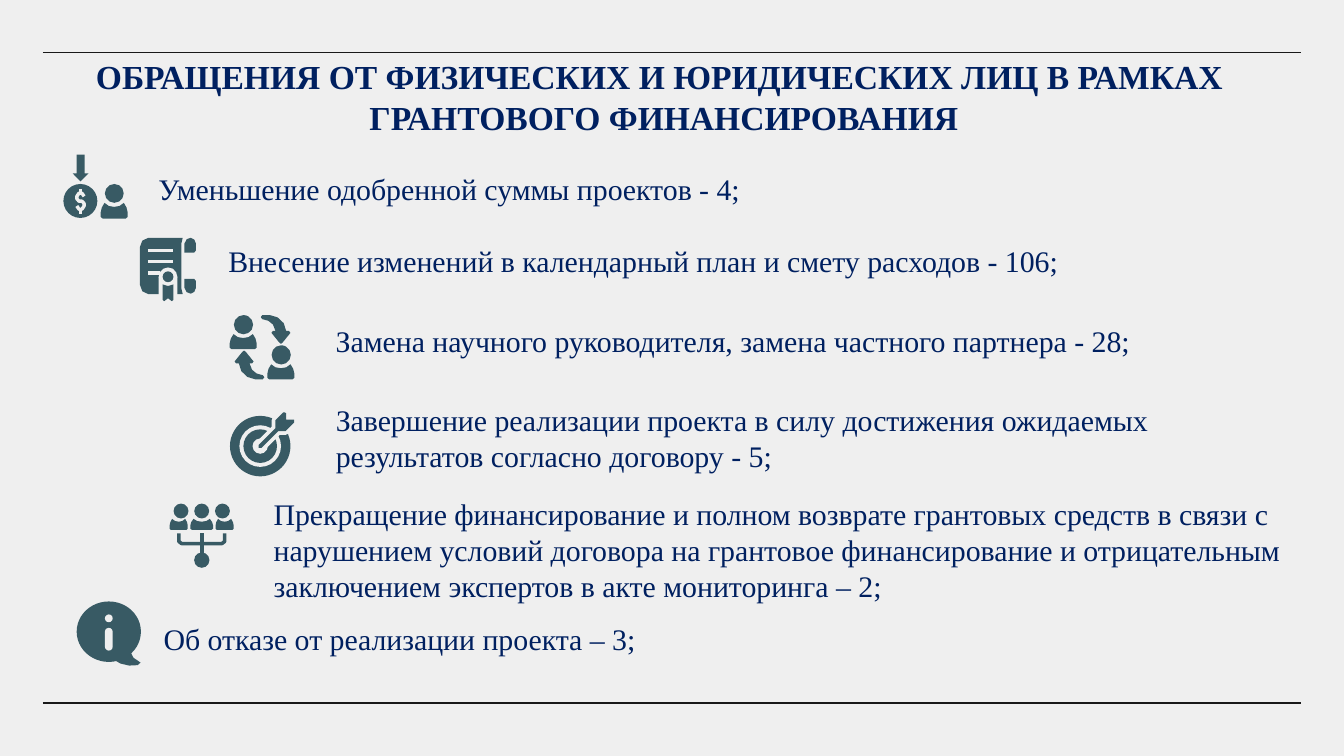
from dataclasses import dataclass

from lxml import etree
from pptx import Presentation
from pptx.dml.color import RGBColor
from pptx.enum.shapes import MSO_CONNECTOR, MSO_SHAPE
from pptx.enum.text import MSO_ANCHOR, PP_ALIGN
from pptx.oxml.ns import qn
from pptx.util import Pt

OVAL = MSO_SHAPE.OVAL
RECTANGLE = MSO_SHAPE.RECTANGLE
ROUNDED = MSO_SHAPE.ROUNDED_RECTANGLE
DOWN_ARROW = MSO_SHAPE.DOWN_ARROW
STRAIGHT = MSO_CONNECTOR.STRAIGHT
BACKGROUND, TEAL, NAVY, RULE = "EFEFEF", "385A64", "002060", "191919"
FONT = "Times New Roman"
Points = list[tuple[float, float]]

# Outlines in fractions of their frame
SHOULDERS: Points = [(.14, 0), (.04, .3), (0, .6), (0, .9), (.07, 1), (.93, 1), (1, .9),
                     (1, .6), (.96, .3), (.86, 0), (.7, .2), (.5, .26), (.3, .2)]
SHEET: Points = [(.2, 0), (1, 0), (.97, .1), (.97, .9), (1, 1), (.2, 1), (.06, .95),
                 (0, .83), (0, .17), (.06, .05)]
SCROLL_END: Points = [(0, .4), (.2, .1), (.55, 0), (.85, .12), (1, .4), (1, .85),
                      (.85, 1), (0, 1)]
RIBBON: Points = [(0, 0), (0, .92), (.15, 1), (.5, .82), (.85, 1), (1, .92), (1, 0), (.5, .1)]
CURVED_ARROW: Points = [(.05, 0), (.3, 0), (.55, .08), (.75, .28), (.83, .55), (.92, .55),
                        (.97, .62), (.72, .95), (.66, 1), (.6, .95), (.35, .62), (.4, .55),
                        (.48, .55), (.4, .33), (.25, .2), (.05, .14), (0, .07)]
DART: Points = [(.74, 0), (.7, 0), (.48, .22), (.48, .44), (.02, .9), (.02, .98), (.1, .98),
                (.56, .52), (.76, .52), (1, .28), (1, .2), (.78, .2), (.78, .03)]
BUBBLE_TAIL: Points = [(0, .65), (.3, .9), (.6, 1), (.9, .98), (1, .85), (.75, .6), (.55, 0)]
DOLLAR_CURVE: Points = [(1, .2), (.7, 0), (.3, 0), (0, .2), (0, .35), (.3, .5), (.7, .5),
                        (1, .65), (1, .8), (.7, 1), (.3, 1), (0, .8)]


@dataclass(frozen=True)
class Frame:
    left: float
    top: float
    width: float
    height: float


@dataclass(frozen=True)
class Label:
    text: str
    frame: Frame
    size: float = 16
    title: bool = False


LABELS = [
    Label("ОБРАЩЕНИЯ ОТ ФИЗИЧЕСКИХ И ЮРИДИЧЕСКИХ ЛИЦ В РАМКАХ \vГРАНТОВОГО ФИНАНСИРОВАНИЯ",
          Frame(18.7, 15.8, 674, 64.8), 18, True),
    Label("Уменьшение одобренной суммы проектов - 4;", Frame(77.8, 87.8, 620, 26.6)),
    Label("Внесение изменений в календарный план и смету расходов - 106;",
          Frame(115.2, 126.7, 517, 26.6)),
    Label("Замена научного руководителя, замена частного партнера - 28;",
          Frame(172.8, 169.2, 476, 26.6)),
    Label("Завершение реализации проекта в силу достижения ожидаемых результатов "
          "согласно договору - 5;", Frame(172.8, 211.7, 525, 46)),
    Label("Прекращение финансирование и полном возврате грантовых средств в связи с "
          "нарушением условий договора на грантовое финансирование и отрицательным "
          "заключением экспертов в акте мониторинга – 2;", Frame(139.5, 262.1, 562.3, 65.5)),
    Label("Об отказе от реализации проекта – 3;", Frame(80.6, 329, 293, 26.6)),
]


def color(value: str) -> RGBColor:
    return RGBColor.from_string(value)


def add_preset(page, kind, frame: Frame, fill: str = TEAL) -> None:
    shape = page.shapes.add_shape(kind, Pt(frame.left), Pt(frame.top),
                                  Pt(frame.width), Pt(frame.height))
    shape.shadow.inherit = False
    shape.fill.solid()
    shape.fill.fore_color.rgb = color(fill)
    shape.line.fill.background()
    if kind == ROUNDED:
        shape.adjustments[0] = 0.5


def add_path(page, frame: Frame, outline: Points, stroke: float = 0,
             ink: str = TEAL, closed: bool = True) -> None:
    """A closed outline is filled; an open one is only stroked."""
    points = [(Pt(frame.left + x * frame.width), Pt(frame.top + y * frame.height))
              for x, y in outline]
    builder = page.shapes.build_freeform(*points[0])
    builder.add_line_segments(points[1:], close=closed)
    shape = builder.convert_to_shape()
    shape.shadow.inherit = False
    if closed:
        shape.fill.solid()
        shape.fill.fore_color.rgb = color(ink)
    else:
        shape.fill.background()
    if stroke:
        shape.line.color.rgb = color(ink)
        shape.line.width = Pt(stroke)
    else:
        shape.line.fill.background()


def add_line(page, start: tuple[float, float], end: tuple[float, float],
             width: float, ink: str) -> None:
    line = page.shapes.add_connector(STRAIGHT, *map(Pt, start + end))
    line.line.color.rgb = color(ink)
    line.line.width = Pt(width)
    etree.SubElement(line._element.spPr, qn("a:effectLst"))


def add_person(page, head: Frame, body: Frame) -> None:
    add_preset(page, OVAL, head)
    add_path(page, body, SHOULDERS)


def add_label(page, label: Label) -> None:
    frame = label.frame
    box = page.shapes.add_textbox(Pt(frame.left), Pt(frame.top),
                                  Pt(frame.width), Pt(frame.height))
    text = box.text_frame
    text.word_wrap = True
    text.text = label.text
    para = text.paragraphs[0]
    para.font.name, para.font.size = FONT, Pt(label.size)
    para.font.bold = label.title
    para.font.color.rgb = color(NAVY)
    if label.title:
        para.alignment = PP_ALIGN.CENTER
        text.vertical_anchor = MSO_ANCHOR.BOTTOM
        text.margin_top = text.margin_bottom = Pt(7.2)


def add_funding_icon(page) -> None:
    add_preset(page, DOWN_ARROW, Frame(38.9, 82.8, 8.6, 14.4))
    add_preset(page, OVAL, Frame(34, 98.6, 18.2, 18.2))
    add_path(page, Frame(41.2, 103.5, 3.9, 8.6), DOLLAR_CURVE, 1.8, BACKGROUND, False)
    for top in (101.2, 111.8):
        add_line(page, (43.1, top), (43.1, top + 2.8), 1.8, BACKGROUND)
    add_person(page, Frame(56.2, 98.6, 10.1, 10.1), Frame(54, 108.7, 14.4, 8.4))


def add_document_icon(page) -> None:
    add_path(page, Frame(74.9, 127.4, 23, 30.2), SHEET)
    for y, right in ((134.2, 92.5), (140.2, 92.5), (146.4, 85.5)):
        add_line(page, (79.2, y), (right, y), 1.9, BACKGROUND)
    add_preset(page, OVAL, Frame(85, 143.3, 10, 10), BACKGROUND)
    add_preset(page, RECTANGLE, Frame(85, 148.3, 10, 9.7), BACKGROUND)
    add_preset(page, OVAL, Frame(87.1, 145.4, 5.8, 5.8))
    add_path(page, Frame(87.1, 152.4, 5.8, 9), RIBBON)
    add_path(page, Frame(98.8, 127.4, 6.2, 7.9), SCROLL_END)
    add_path(page, Frame(98.8, 149.4, 6.2, 7.9), [(x, 1 - y) for x, y in SCROLL_END])


def add_exchange_icon(page) -> None:
    for left, top in ((123.1, 168.8), (143.3, 185)):
        add_person(page, Frame(left + 2.2, top, 10.3, 10.3),
                   Frame(left, top + 10.2, 14.4, 8.1))
    add_path(page, Frame(139.7, 168.8, 16.4, 15.4), CURVED_ARROW)
    add_path(page, Frame(125.2, 187.8, 16.4, 15.4), [(1 - x, 1 - y) for x, y in CURVED_ARROW])


def add_target_icon(page) -> None:
    for diameter, fill in ((32.4, TEAL), (22.3, BACKGROUND), (18, TEAL), (8.2, BACKGROUND)):
        add_preset(page, OVAL, Frame(139.4 - diameter / 2, 239 - diameter / 2,
                                     diameter, diameter), fill)
    dart = Frame(138.2, 220.9, 19.4, 19.4)
    add_path(page, dart, DART, 4, BACKGROUND)
    add_path(page, dart, DART)


def add_team_icon(page) -> None:
    for center, left, width in ((97, 90.9, 9.7), (108.1, 102, 12.2), (119.2, 115.5, 9.7)):
        add_person(page, Frame(center - 4, 269.8, 8, 8), Frame(left, 278, width, 5.9))
    add_path(page, Frame(95.8, 285.8, 24.6, 5.4), [(0, 0), (0, .8), (.06, 1), (.94, 1),
                                                   (1, .8), (1, 0)], 1.9, TEAL, False)
    add_line(page, (108.1, 285.8), (108.1, 297), 1.9, TEAL)
    add_preset(page, OVAL, Frame(104, 296, 8.2, 8.2))


def add_information_icon(page) -> None:
    add_preset(page, OVAL, Frame(41.1, 322.2, 34.4, 32.4))
    add_path(page, Frame(60, 346, 15.3, 10.6), BUBBLE_TAIL)
    add_preset(page, OVAL, Frame(56.2, 329.2, 4.2, 4.2), BACKGROUND)
    add_preset(page, ROUNDED, Frame(56.2, 336.4, 4.2, 12.2), BACKGROUND)


def main() -> None:
    deck = Presentation()
    deck.slide_width, deck.slide_height = Pt(720), Pt(405)
    page = deck.slides.add_slide(deck.slide_layouts[6])
    page.background.fill.solid()
    page.background.fill.fore_color.rgb = color(BACKGROUND)

    # Rules above and below the content
    for y in (28.1, 376.6):
        add_line(page, (23, y), (697, y), 0.75, RULE)

    # Title and list
    for label in LABELS:
        add_label(page, label)

    # Icons, top to bottom
    for add_icon in (add_funding_icon, add_document_icon, add_exchange_icon,
                     add_target_icon, add_team_icon, add_information_icon):
        add_icon(page)

    deck.save("out.pptx")


if __name__ == "__main__":
    main()
